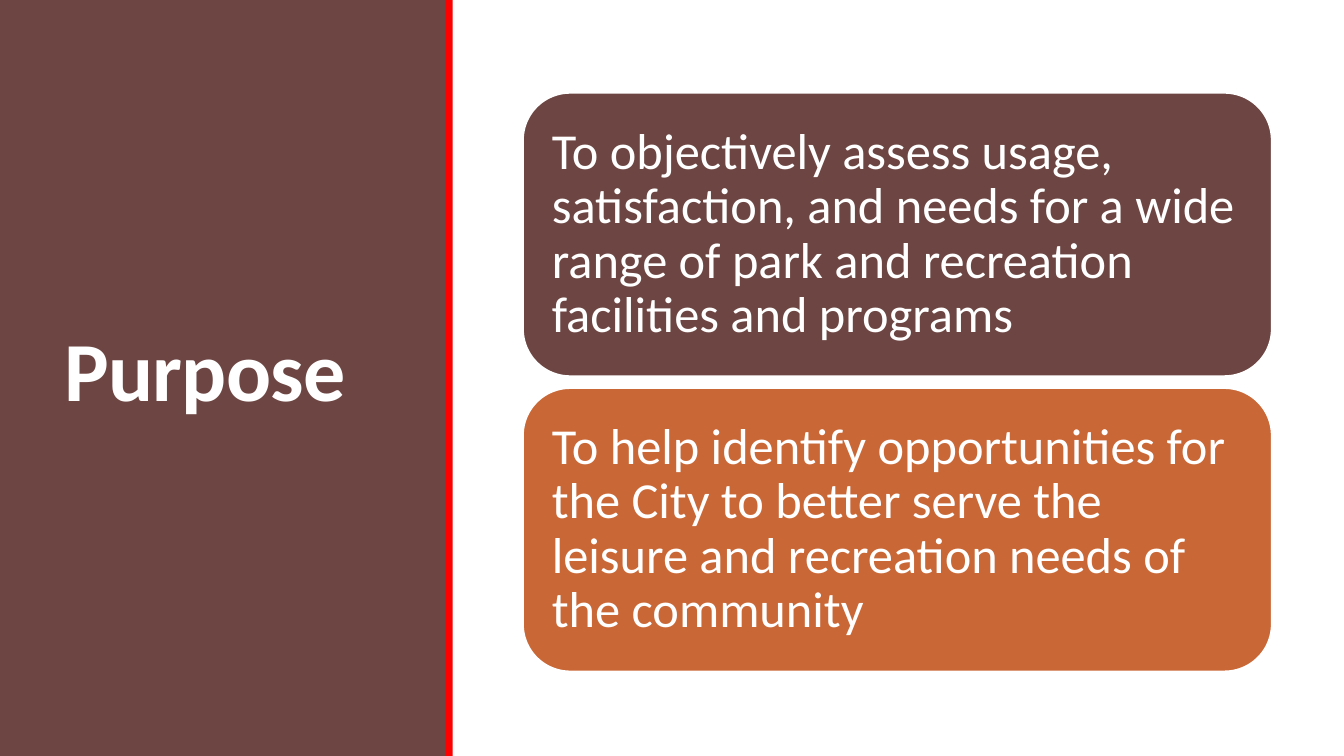
from pptx import Presentation
from pptx import util as u
from pptx.dml import color
from pptx.enum import shapes, text

deck = Presentation()
deck.slide_width, deck.slide_height = u.Cm(33.87), u.Cm(19.05)
slide = deck.slides.add_slide(deck.slide_layouts[6])


def paint(fill, tint):
    fill.solid()
    fill.fore_color.rgb = color.RGBColor.from_string(tint)


def write(shape, words, size, pad=(0.25, 0.13), bold=False, lead=0.9, track=0):
    frame = shape.text_frame
    frame.word_wrap = True
    frame.vertical_anchor = text.MSO_ANCHOR.MIDDLE
    frame.margin_left = frame.margin_right = u.Cm(pad[0])
    frame.margin_top = frame.margin_bottom = u.Cm(pad[1])
    para = frame.paragraphs[0]
    para.alignment = text.PP_ALIGN.LEFT
    para.line_spacing = lead
    run = para.add_run()
    run.text = words
    run.font.name = "Calibri"
    run.font.size = u.Pt(size)
    run.font.bold = bold
    paint(run.font.fill, "FFFFFF")
    if track:
        run.font._element.set("spc", str(track))


for left, width, tint in [(0, 11.25, "6D4643"), (11.23, 0.18, "FF0000")]:
    bar = slide.shapes.add_shape(
        shapes.MSO_SHAPE.RECTANGLE, u.Cm(left), 0, u.Cm(width), deck.slide_height)
    bar.shadow.inherit = False
    paint(bar.fill, tint)
    bar.line.fill.background()

title = slide.shapes.add_textbox(u.Cm(1.37), u.Cm(1.45), u.Cm(8.56), u.Cm(16.03))
write(title, "Purpose", 60, bold=True, lead=0.85, track=-50)

goals = [
    ("To objectively assess usage, satisfaction, and needs for a wide range "
     "of park and recreation facilities and programs", "6D4643"),
    ("To help identify opportunities for the City to better serve the leisure "
     "and recreation needs of the community", "CA6736"),
]
for row, (words, tint) in enumerate(goals):
    card = slide.shapes.add_shape(
        shapes.MSO_SHAPE.ROUNDED_RECTANGLE,
        u.Cm(13.18), u.Cm(2.34 + 7.44 * row), u.Cm(18.87), u.Cm(7.14))
    card.shadow.inherit = False
    paint(card.fill, tint)
    paint(card.line.fill, "FFFFFF")
    card.line.width = u.Pt(1.25)
    write(card, words, 36, pad=(0.38, 0.38))

deck.save("out.pptx")
